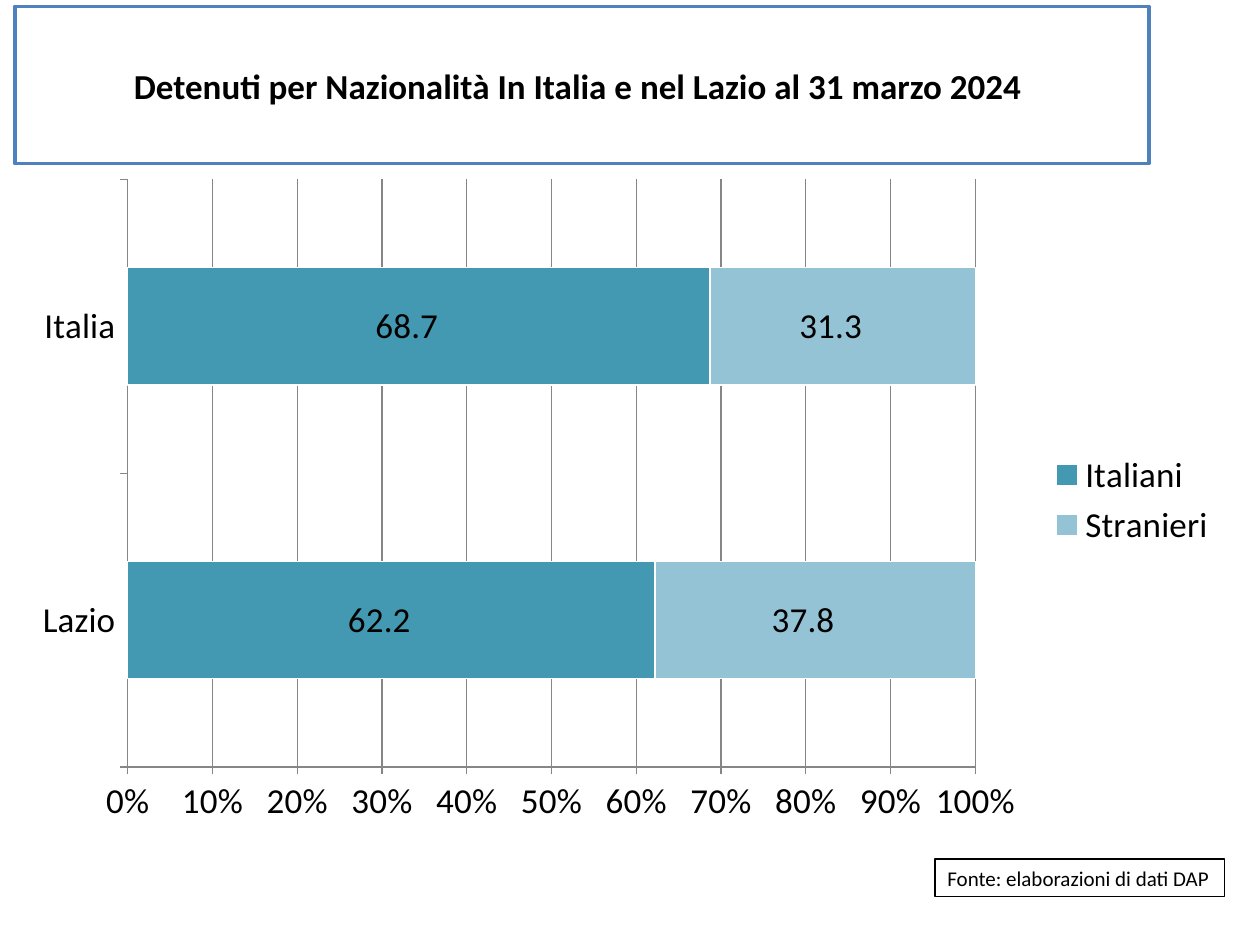
from pptx import Presentation
from pptx.chart.data import CategoryChartData
from pptx.dml.color import RGBColor
from pptx.enum.chart import XL_CHART_TYPE, XL_LABEL_POSITION, XL_LEGEND_POSITION, XL_TICK_MARK
from pptx.enum.shapes import MSO_SHAPE
from pptx.enum.text import MSO_ANCHOR, PP_ALIGN
from pptx.oxml import parse_xml
from pptx.oxml.ns import nsdecls, qn
from pptx.util import Cm, Pt

BLACK = RGBColor(0x00, 0x00, 0x00)
WHITE = RGBColor(0xFF, 0xFF, 0xFF)
FRAME_BLUE = RGBColor(0x4F, 0x81, 0xBD)
AXIS_GRAY = RGBColor(0x86, 0x86, 0x86)
TEAL = RGBColor(0x43, 0x99, 0xB1)
PALE_TEAL = RGBColor(0x93, 0xC3, 0xD5)
FONT = "Calibri"
ACCOUNTING = r"_-* #,##0.0\ _€_-;\-* #,##0.0\ _€_-"


class SlideBuilder:
    def __init__(self, slide):
        self.slide = slide

    def style_font(self, font, size, bold=False):
        font.name = FONT
        font.size = Pt(size)
        font.bold = bold
        font.color.rgb = BLACK

    def framed_text(self, text, place, size, border, width,
                    bold=False, align=PP_ALIGN.LEFT, wrap=True):
        frame = self.slide.shapes.add_shape(MSO_SHAPE.RECTANGLE, *map(Cm, place))
        frame.shadow.inherit = False
        frame.fill.solid()
        frame.fill.fore_color.rgb = WHITE
        frame.line.color.rgb = border
        frame.line.width = Pt(width)
        body = frame.text_frame
        body.word_wrap = wrap
        body.vertical_anchor = MSO_ANCHOR.MIDDLE
        paragraph = body.paragraphs[0]
        paragraph.alignment = align
        run = paragraph.add_run()
        run.text = text
        self.style_font(run.font, size, bold)

    def share_chart(self, categories, groups, place, plot_box):
        """Add a 100% stacked bar chart; groups holds (name, values, colour)."""
        data = CategoryChartData(number_format=ACCOUNTING)
        data.categories = categories
        for name, values, _ in groups:
            data.add_series(name, values)
        chart = self.slide.shapes.add_chart(
            XL_CHART_TYPE.BAR_STACKED_100, *map(Cm, place), data).chart
        chart.has_title = False
        self.style_font(chart.font, 20)
        chart.has_legend = True
        chart.legend.position = XL_LEGEND_POSITION.RIGHT
        chart.legend.include_in_layout = False

        plot = chart.plots[0]
        plot.gap_width = 150
        plot.overlap = 100
        plot.vary_by_categories = False
        for series, (_, _, colour) in zip(plot.series, groups):
            series.format.fill.solid()
            series.format.fill.fore_color.rgb = colour
            series.format.line.color.rgb = WHITE
            series.format.line.width = Pt(0.75)
            labels = series.data_labels
            labels.show_value = True
            labels.position = XL_LABEL_POSITION.CENTER
            labels.number_format = ACCOUNTING
            labels.number_format_is_linked = False
            self.style_font(labels.font, 20)

        for axis in (chart.category_axis, chart.value_axis):
            axis.major_tick_mark = XL_TICK_MARK.OUTSIDE
            axis.minor_tick_mark = XL_TICK_MARK.NONE
            axis.format.line.color.rgb = AXIS_GRAY
            axis.format.line.width = Pt(0.75)
            self.style_font(axis.tick_labels.font, 20)
        shares = chart.value_axis
        shares.minimum_scale = 0
        shares.maximum_scale = 1
        shares.major_unit = 0.1
        shares.has_major_gridlines = True
        shares.major_gridlines.format.line.color.rgb = AXIS_GRAY
        shares.major_gridlines.format.line.width = Pt(0.75)
        shares.tick_labels.number_format = "0%"
        shares.tick_labels.number_format_is_linked = False
        self.place_plot(chart, plot_box)

    def place_plot(self, chart, plot_box):
        """Fix the inner plot area as x, y, w, h fractions of the chart."""
        area = chart.plots[0]._element.getparent()
        for automatic in area.findall(qn("c:layout")):
            area.remove(automatic)
        modes = '<c:xMode val="edge"/><c:yMode val="edge"/>'
        sizes = "".join(f'<c:{side} val="{share}"/>'
                        for side, share in zip("xywh", plot_box))
        area.insert(0, parse_xml(
            f'<c:layout {nsdecls("c")}><c:manualLayout><c:layoutTarget val="inner"/>'
            f'{modes}{sizes}</c:manualLayout></c:layout>'))


def main():
    deck = Presentation()
    deck.slide_width, deck.slide_height = Cm(25.4), Cm(19.05)
    builder = SlideBuilder(deck.slides.add_slide(deck.slide_layouts[6]))
    builder.framed_text(
        "Detenuti per Nazionalità In Italia e nel Lazio al 31 marzo 2024 ",
        (0.3, 0.13, 22.86, 3.17), 20, FRAME_BLUE, 2, bold=True, align=PP_ALIGN.CENTER)
    builder.framed_text(
        "Fonte: elaborazioni di dati DAP",
        (18.85, 17.32, 5.84, 0.76), 12, BLACK, 0.75, wrap=False)
    builder.share_chart(
        ("Lazio", "Italia"),
        (("Italiani", (62.2, 68.7), TEAL), ("Stranieri", (37.8, 31.3), PALE_TEAL)),
        (0.38, 3.35, 24.41, 13.46), (0.09, 0.02, 0.7, 0.88))
    deck.save("out.pptx")


if __name__ == "__main__":
    main()
